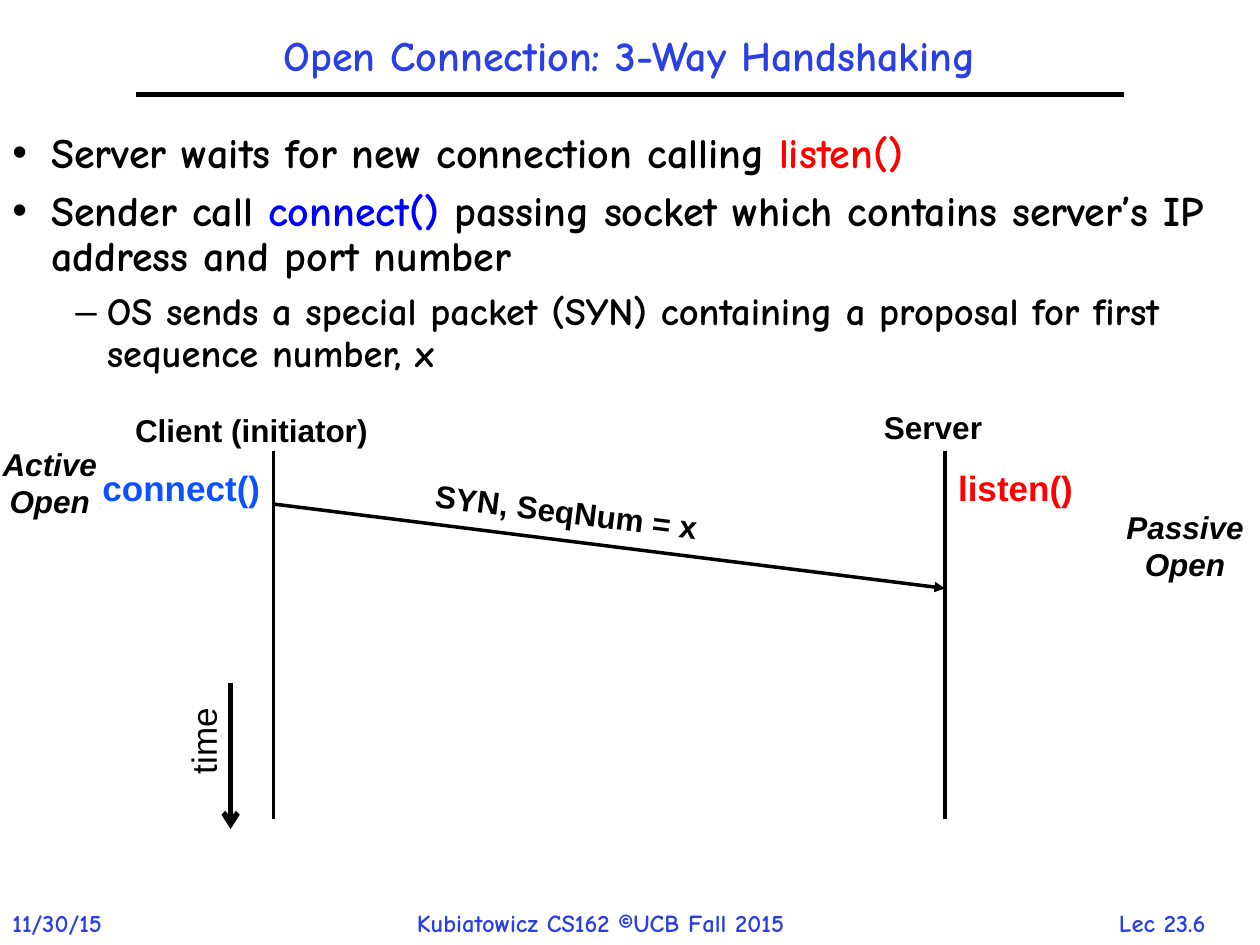
import pptx
import pptx.util
from pptx.dml.color import RGBColor
from pptx.enum.shapes import MSO_CONNECTOR
from pptx.enum.text import MSO_ANCHOR, PP_ALIGN
from pptx.oxml.ns import qn
from lxml import etree

Inches, Pt = pptx.util.Inches, pptx.util.Pt

BLACK = RGBColor(0x00, 0x00, 0x00)
TITLE_BLUE = RGBColor(0x2A, 0x40, 0xE2)
CALL_BLUE = RGBColor(0x00, 0x00, 0xFF)
CLIENT_BLUE = RGBColor(0x0B, 0x52, 0xFC)
RED = RGBColor(0xFF, 0x00, 0x00)
HAND, SANS = "Comic Neue", "Arial"
LEFT, CENTER = PP_ALIGN.LEFT, PP_ALIGN.CENTER

# Content
TITLE = "Open Connection: 3-Way Handshaking"
# bullet, size, left margin, hanging indent, runs
BULLETS = [
    ("•", 24, 0.31, 0.31, [("Server waits for new connection calling ", BLACK),
                           ("listen()", RED)]),
    ("•", 24, 0.31, 0.31, [("Sender call ", BLACK), ("connect() ", CALL_BLUE),
                           ("passing socket which contains server’s IP "
                            "address and port number", BLACK)]),
    ("–", 22, 0.75, 0.25, [("OS sends a special packet (SYN) containing a "
                            "proposal for first sequence number, x", BLACK)]),
]
# text, box, alignment
FOOTERS = [
    ("11/30/15", (0, 7.16, 1.12, 0.34), LEFT),
    ("Kubiatowicz CS162 ©UCB Fall 2015", (3.21, 7.16, 3.61, 0.34), LEFT),
    ("Lec 23.6", (8.56, 7.16, 1.33, 0.34), CENTER),
]
# text, box, size, colour, bold, italic, rotation
LABELS = [
    ("Client (initiator)", (0.97, 3.21, 2.05, 0.4), 18, BLACK, True, False, 0),
    ("Server", (6.91, 3.19, 0.99, 0.4), 18, BLACK, True, False, 0),
    ("SYN, SeqNum = x", (3.33, 3.86, 2.33, 0.4), 18, BLACK, True, False, 7.2),
    ("Active\nOpen", (-0.11, 3.48, 1.01, 0.7), 18, BLACK, True, True, 0),
    ("Passive\nOpen", (8.81, 3.98, 1.19, 0.7), 18, BLACK, True, True, 0),
    ("connect()", (0.71, 3.65, 1.46, 0.43), 20, CLIENT_BLUE, True, False, 0),
    ("listen()", (7.5, 3.65, 1.12, 0.43), 20, RED, True, False, 0),
    ("time", (1.25, 5.66, 0.73, 0.44), 20, BLACK, False, False, 270),
]
CLIENT_X, SERVER_X = 2.17, 7.5
LIFE_TOP, LIFE_BOTTOM = 3.58, 6.5
# start, end, width, arrowhead
LINES = [
    ((1.08, 0.75), (8.92, 0.75), 3, None),
    ((CLIENT_X, LIFE_TOP), (CLIENT_X, LIFE_BOTTOM), 2, None),
    ((SERVER_X, LIFE_TOP), (SERVER_X, LIFE_BOTTOM), 2, None),
    ((CLIENT_X, 4), (SERVER_X, 4.67), 2, "triangle"),
    ((1.83, 5.42), (1.83, 6.58), 3, "arrow"),
]


def add_box(slide, box, wrap=False):
    sp = slide.shapes.add_textbox(*map(Inches, box))
    sp.text_frame.word_wrap = wrap
    return sp


def add_run(p, text, font, size, color, bold=True, italic=False):
    r = p.add_run()
    r.text = text
    r.font.name, r.font.size = font, Pt(size)
    r.font.bold, r.font.italic = bold, italic
    r.font.color.rgb = color


def add_line(slide, start, end, width, head):
    line = slide.shapes.add_connector(MSO_CONNECTOR.STRAIGHT,
                                      *map(Inches, start + end))
    line.line.color.rgb = BLACK
    line.line.width = Pt(width)
    if head:
        etree.SubElement(line.line._get_or_add_ln(), qn("a:tailEnd"), type=head)
    etree.SubElement(line._element.spPr, qn("a:effectLst"))


def set_bullet(p, char, margin, hang):
    pPr = p._p.get_or_add_pPr()
    pPr.set("marL", str(Inches(margin)))
    pPr.set("indent", str(-Inches(hang)))
    etree.SubElement(pPr, qn("a:buFont"), typeface=SANS)
    etree.SubElement(pPr, qn("a:buChar"), char=char)


def main():
    prs = pptx.Presentation()
    prs.slide_width, prs.slide_height = Inches(10), Inches(7.5)
    slide = prs.slides.add_slide(prs.slide_layouts[6])

    # Title
    tf = add_box(slide, (1.08, 0.17, 7.83, 0.58), wrap=True).text_frame
    tf.vertical_anchor = MSO_ANCHOR.MIDDLE
    p = tf.paragraphs[0]
    p.alignment, p.line_spacing = CENTER, 0.9
    add_run(p, TITLE, HAND, 24, TITLE_BLUE)

    # Bullet list
    tf = add_box(slide, (0, 1, 9.75, 2.25), wrap=True).text_frame
    for i, (char, size, margin, hang, runs) in enumerate(BULLETS):
        p = tf.add_paragraph() if i else tf.paragraphs[0]
        p.line_spacing, p.space_before = 0.9, Pt(0.3 * size)
        set_bullet(p, char, margin, hang)
        for text, color in runs:
            add_run(p, text, HAND, size, color)

    # Title rule, lifelines and arrows
    for line in LINES:
        add_line(slide, *line)

    # Diagram labels
    for text, box, size, color, bold, italic, rotation in LABELS:
        sp = add_box(slide, box)
        sp.rotation = rotation
        p = sp.text_frame.paragraphs[0]
        p.alignment = CENTER
        for i, part in enumerate(text.split("\n")):
            if i:
                p.add_line_break()
            add_run(p, part, SANS, size, color, bold, italic)

    # Footer
    for text, box, align in FOOTERS:
        p = add_box(slide, box).text_frame.paragraphs[0]
        p.alignment = align
        add_run(p, text, HAND, 14, TITLE_BLUE)

    prs.save("out.pptx")


if __name__ == "__main__":
    main()
